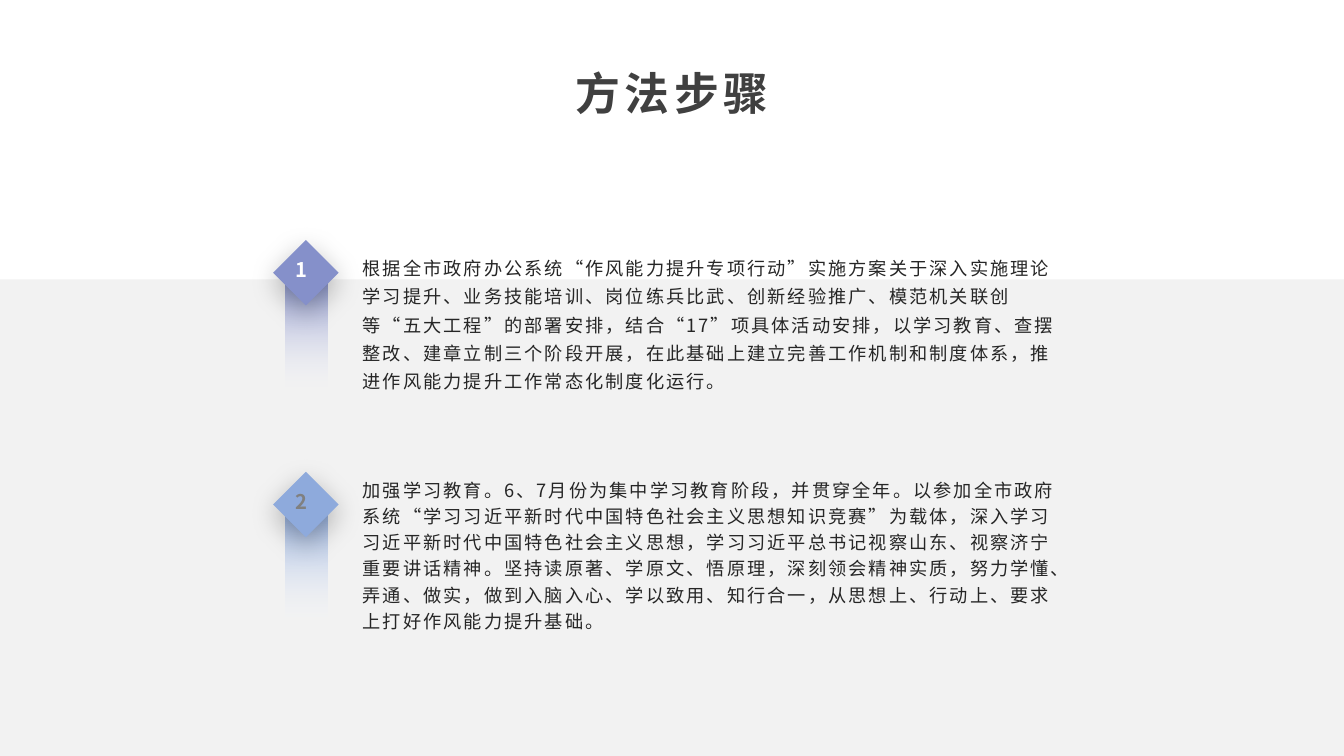
from dataclasses import dataclass

from lxml import etree
from pptx import Presentation
from pptx import util as u
from pptx.dml.color import RGBColor
from pptx.enum import lang, shapes, text
from pptx.oxml import ns

FONT = "Noto Sans CJK SC"
COLORS = {
    "white": "FFFFFF", "panel": "F2F2F2", "title": "404040", "body": "262626",
    "violet": "8590CA", "blue": "8EAADC", "grey": "808080", "black": "000000",
}
FIRST_TOP, STEP_GAP = 164.9, 165.6


@dataclass(frozen=True)
class Box:
    left: float
    top: float
    width: float
    height: float

    def lengths(self) -> list[u.Length]:
        return [u.Pt(v) for v in (self.left, self.top, self.width, self.height)]


@dataclass(frozen=True)
class Style:
    size: float
    color: str
    bold: bool = False
    tracking: float = 0
    line_spacing: float = 1.0


@dataclass(frozen=True)
class Step:
    number: str
    number_color: str
    accent: str
    line_spacing: float
    body: str


STEPS = [
    Step("1", "white", "violet", 1.3,
         "根据全市政府办公系统“作风能力提升专项行动”实施方案关于深入实施理论学习提升、"
         "业务技能培训、岗位练兵比武、创新经验推广、模范机关联创等“五大工程”的部署安排，"
         "结合“17”项具体活动安排，以学习教育、查摆整改、建章立制三个阶段开展，"
         "在此基础上建立完善工作机制和制度体系，推进作风能力提升工作常态化制度化运行。"),
    Step("2", "grey", "blue", 1.2,
         "加强学习教育。6、7月份为集中学习教育阶段，并贯穿全年。以参加全市政府系统"
         "“学习习近平新时代中国特色社会主义思想知识竞赛”为载体，"
         "深入学习习近平新时代中国特色社会主义思想，学习习近平总书记视察山东、"
         "视察济宁重要讲话精神。坚持读原著、学原文、悟原理，深刻领会精神实质，"
         "努力学懂、弄通、做实，做到入脑入心、学以致用、知行合一，"
         "从思想上、行动上、要求上打好作风能力提升基础。"),
]


def rgb(name: str) -> RGBColor:
    return RGBColor.from_string(COLORS[name])


def add_text(slide, box: Box, words: str, style: Style):
    """Add a wrapped, vertically centred one-run text box; return the box."""
    label = slide.shapes.add_textbox(*box.lengths())
    frame = label.text_frame
    frame.word_wrap = True
    frame.vertical_anchor = text.MSO_ANCHOR.MIDDLE
    paragraph = frame.paragraphs[0]
    paragraph.line_spacing = style.line_spacing
    run = paragraph.add_run()
    run.text = words
    font = run.font
    font.name, font.size, font.bold = FONT, u.Pt(style.size), style.bold
    font.color.rgb = rgb(style.color)
    font.language_id = lang.MSO_LANGUAGE_ID.SIMPLIFIED_CHINESE
    properties = run._r.get_or_add_rPr()
    etree.SubElement(properties, ns.qn("a:ea"), typeface=FONT)
    if style.tracking:
        properties.set("spc", str(round(style.tracking * 100)))
    return label


def add_plain_shape(slide, kind: shapes.MSO_SHAPE, box: Box, color: str):
    shape = slide.shapes.add_shape(kind, *box.lengths())
    shape.shadow.inherit = False
    shape.line.fill.background()
    shape.fill.solid()
    shape.fill.fore_color.rgb = rgb(color)
    return shape


def fade_downward(shape, color: str) -> None:
    """Fill from the colour at the top to clear white at the bottom."""
    shape.fill.gradient()
    shape.fill.gradient_angle = 90
    clear, solid = shape.fill.gradient_stops
    clear.position, solid.position = 0, 1
    clear.color.rgb, solid.color.rgb = rgb("white"), rgb(color)
    clear_color = shape._element.spPr.find(".//" + ns.qn("a:srgbClr"))
    etree.SubElement(clear_color, ns.qn("a:alpha"), val="0")


def drop_shadow(shape) -> None:
    effects = shape._element.spPr.find(ns.qn("a:effectLst"))
    shadow = etree.SubElement(
        effects, ns.qn("a:outerShdw"), blurRad=str(u.Pt(20)), dist=str(u.Pt(6)),
        dir="5400000", algn="t", rotWithShape="0")
    tint = etree.SubElement(shadow, ns.qn("a:srgbClr"), val=COLORS["black"])
    etree.SubElement(tint, ns.qn("a:alpha"), val="27000")


def add_step(slide, step: Step, top: float) -> None:
    add_text(slide, Box(252, top, 513.4, 129.6), step.body,
             Style(13, "body", tracking=1.5, line_spacing=step.line_spacing))
    ribbon = add_plain_shape(slide, shapes.MSO_SHAPE.RECTANGLE,
                             Box(203.8, top + 33.1, 30.5, 87.8), step.accent)
    fade_downward(ribbon, step.accent)
    diamond = add_plain_shape(slide, shapes.MSO_SHAPE.FLOWCHART_DECISION,
                              Box(195.1, top + 6.5, 46.8, 46.8), step.accent)
    drop_shadow(diamond)
    add_text(slide, Box(204, top + 9.4, 22.3, 36), step.number,
             Style(14.4, step.number_color, bold=True))


def add_title(slide) -> None:
    title = add_text(slide, Box(36, 48.2, 888, 49.7), "方法步骤",
                     Style(32, "title", bold=True, tracking=3, line_spacing=0.9))
    frame = title.text_frame
    frame.vertical_anchor = text.MSO_ANCHOR.TOP
    frame.margin_left = frame.margin_right = u.Pt(5.8)
    frame.margin_top = frame.margin_bottom = u.Pt(2.9)
    frame.paragraphs[0].alignment = text.PP_ALIGN.CENTER
    frame.paragraphs[0].space_after = u.Pt(8)


def main() -> None:
    deck = Presentation()
    deck.slide_width, deck.slide_height = u.Pt(960), u.Pt(540)
    slide = deck.slides.add_slide(deck.slide_layouts[6])
    add_plain_shape(slide, shapes.MSO_SHAPE.RECTANGLE,
                    Box(0, 199.5, 960, 340.5), "panel")
    add_title(slide)
    for index, step in enumerate(STEPS):
        add_step(slide, step, FIRST_TOP + index * STEP_GAP)
    deck.save("out.pptx")


if __name__ == "__main__":
    main()
